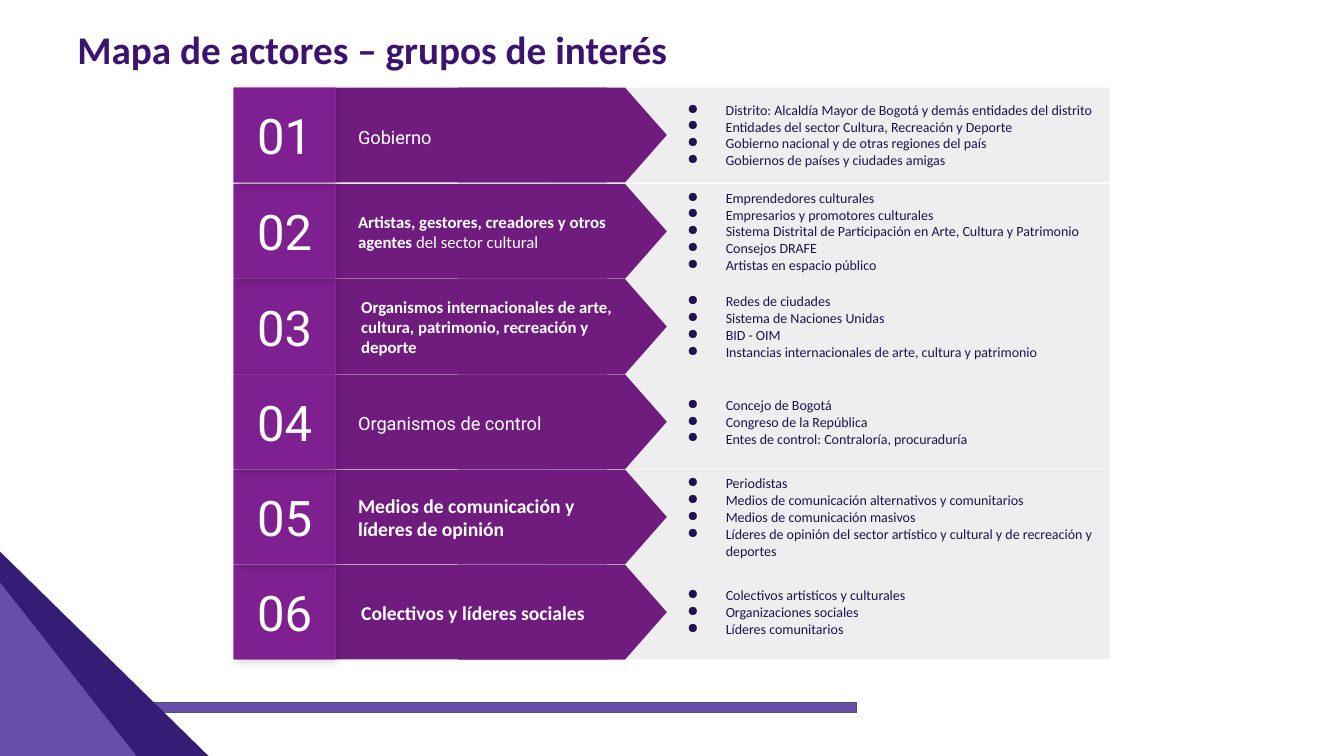
from lxml.etree import SubElement
from pptx import Presentation
from pptx.dml.color import RGBColor
from pptx.enum.shapes import MSO_SHAPE as SHAPE
from pptx.enum.text import MSO_ANCHOR as ANCHOR, PP_ALIGN as ALIGN
from pptx.oxml.ns import qn
from pptx.util import Pt

INK = "20124D"
WHITE = "FFFFFF"
ROW_H = 67.7
PITCH = 68
TOP = 63.4
FIRST_LIFT = 0.8
DRAW_ORDER = (2, 1, 0, 5, 4, 3)

ROWS = [
    ([("Gobierno", False)], "Roboto", 13, 246.2, 332,
     ["Distrito: Alcaldía Mayor de Bogotá y demás entidades del distrito",
      "Entidades del sector Cultura, Recreación y Deporte",
      "Gobierno nacional y de otras regiones del país",
      "Gobiernos de países y ciudades amigas"]),
    ([("Artistas, gestores, creadores y otros agentes", True),
      (" del sector cultural", False)], "Calibri", 12, 246.2, 339,
     ["Emprendedores culturales",
      "Empresarios y promotores culturales",
      "Sistema Distrital de Participación en Arte, Cultura y Patrimonio",
      "Consejos DRAFE",
      "Artistas en espacio público"]),
    ([("Organismos internacionales de arte, cultura, patrimonio, recreación y deporte", True)],
     "Calibri", 12, 248.4, 312,
     ["Redes de ciudades",
      "Sistema de Naciones Unidas",
      "BID - OIM",
      "Instancias internacionales de arte, cultura y patrimonio"]),
    ([("Organismos de control", False)], "Roboto", 13, 246.2, 312,
     ["Concejo de Bogotá",
      "Congreso de la República",
      "Entes de control: Contraloría, procuraduría"]),
    ([("Medios de comunicación y líderes de opinión", True)], "Calibri", 14, 246.2, 339,
     ["Periodistas",
      "Medios de comunicación alternativos y comunitarios",
      "Medios de comunicación masivos",
      "Líderes de opinión del sector artístico y cultural y de recreación y deportes"]),
    ([("Colectivos y líderes sociales", True)], "Calibri", 14, 248.4, 312,
     ["Colectivos artísticos y culturales",
      "Organizaciones sociales",
      "Líderes comunitarios"]),
]


def rgb(value):
    return RGBColor.from_string(value)


class Deck:
    def __init__(self, width, height):
        self.prs = Presentation()
        self.prs.slide_width, self.prs.slide_height = Pt(width), Pt(height)
        self.s = self.prs.slides.add_slide(self.prs.slide_layouts[6])

    def shape(self, kind, x, y, w, h, fill, line=None, rotation=0):
        sp = self.s.shapes.add_shape(kind, Pt(x), Pt(y), Pt(w), Pt(h))
        sp.shadow.inherit = False
        sp.rotation = rotation
        sp.fill.solid()
        sp.fill.fore_color.rgb = rgb(fill)
        if line:
            sp.line.color.rgb = rgb(line)
            sp.line.width = Pt(0.75)
        else:
            sp.line.fill.background()
        return sp

    def cast_shadow(self, sp):
        effects = sp._element.spPr.find(qn("a:effectLst"))
        shadow = SubElement(effects, qn("a:outerShdw"), blurRad=str(Pt(5.6)),
                            dist=str(Pt(2.2)), dir="2700000", algn="bl", rotWithShape="0")
        color = SubElement(shadow, qn("a:srgbClr"), val="000000")
        SubElement(color, qn("a:alpha"), val="17000")

    def frame(self, sp, margin=9.6, anchor=ANCHOR.MIDDLE):
        tf = sp.text_frame
        tf.word_wrap = True
        tf.vertical_anchor = anchor
        tf.margin_left = tf.margin_right = Pt(margin)
        tf.margin_top = tf.margin_bottom = Pt(min(margin, margin if margin > 8 else margin / 2))
        return tf

    def box(self, x, y, w, h, **style):
        return self.frame(self.s.shapes.add_textbox(Pt(x), Pt(y), Pt(w), Pt(h)), **style)

    def run(self, p, text, size, color, font="Calibri", bold=False):
        r = p.add_run()
        r.text = text
        r.font.name, r.font.size, r.font.bold = font, Pt(size), bold
        r.font.color.rgb = rgb(color)

    def bullets(self, tf, items):
        for i, item in enumerate(items):
            p = tf.add_paragraph() if i else tf.paragraphs[0]
            pPr = p._p.get_or_add_pPr()
            pPr.set("marL", str(Pt(48)))
            pPr.set("indent", str(Pt(-27.4)))
            color = SubElement(pPr, qn("a:buClr"))
            SubElement(color, qn("a:srgbClr"), val=INK)
            SubElement(pPr, qn("a:buChar"), char="●")
            self.run(p, item, 10, INK)

    def actor_row(self, i):
        label, font, size, label_x, list_w, items = ROWS[i]
        y = TOP + PITCH * i - (0 if i else FIRST_LIFT)
        self.shape(SHAPE.RECTANGLE, 391.7, y, 401, ROW_H, "EEEEEE")
        self.shape(SHAPE.RECTANGLE, 239.8, y, 193.7, ROW_H, "701C7F")
        self.shape(SHAPE.FLOWCHART_OFFPAGE_CONNECTOR, 368, y + (ROW_H - 149) / 2,
                   ROW_H, 149, "701C7F", rotation=270)
        p = self.box(label_x, y + 8, 203.8, 51.8).paragraphs[0]
        if font == "Roboto":
            p.line_spacing = 1.15
        for text, bold in label:
            self.run(p, text, size, WHITE, font, bold)
        self.cast_shadow(self.shape(SHAPE.RECTANGLE, 167, y, 72.8, ROW_H, "761E86"))
        number = self.shape(SHAPE.RECTANGLE, 167, y, 72.8, ROW_H, "7F2090")
        p = self.frame(number).paragraphs[0]
        p.alignment = ALIGN.CENTER
        self.run(p, f"{i + 1:02}", 35, WHITE, "Roboto")
        self.bullets(self.box(460.8, y, list_w, ROW_H), items)


def main():
    deck = Deck(960, 540)
    deck.shape(SHAPE.RECTANGLE, 0, 501.6, 612, 7.4, "674EA7", line="44546A")
    deck.shape(SHAPE.RIGHT_TRIANGLE, 0, 394, 149, 146, "351C75")
    deck.shape(SHAPE.RIGHT_TRIANGLE, 0, 416, 97.4, 124, "674EA7")
    title = deck.box(48.2, 14.4, 900, 47.5, margin=7.2, anchor=ANCHOR.TOP)
    deck.run(title.paragraphs[0], "Mapa de actores – grupos de interés", 28, "3C136E", bold=True)
    for i in DRAW_ORDER:
        deck.actor_row(i)
    deck.prs.save("out.pptx")


if __name__ == "__main__":
    main()
